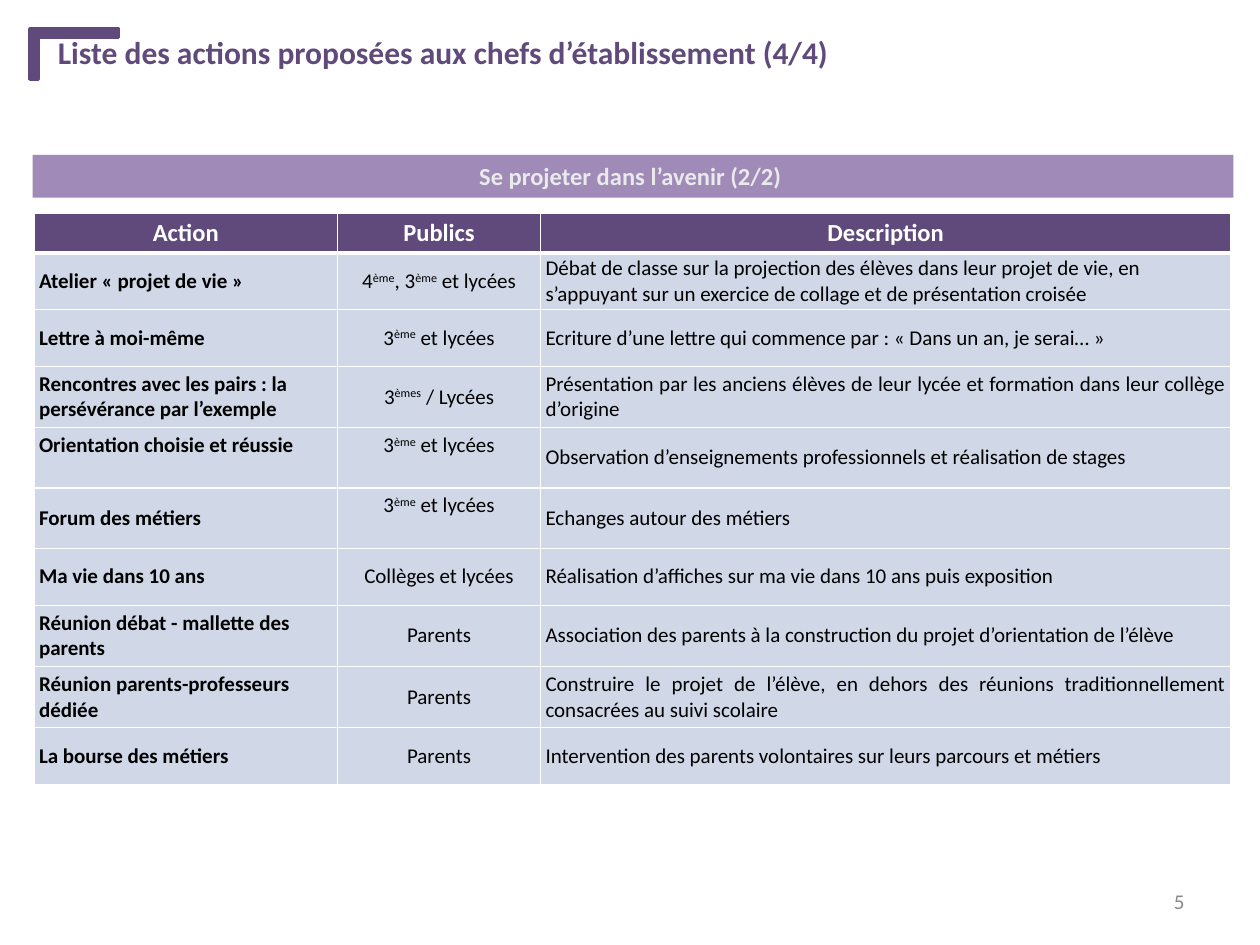
from lxml.etree import SubElement
from pptx import Presentation
from pptx.dml.color import RGBColor
from pptx.enum.shapes import MSO_SHAPE as Shape
from pptx.enum.text import MSO_ANCHOR as Anchor, PP_ALIGN as Align
from pptx.oxml.ns import qn
from pptx.util import Inches, Pt

COLORS = {"purple": "604A7B", "lilac": "9F8AB8", "pale": "EAEAEA", "row": "D0D8E8",
          "white": "FFFFFF", "black": "000000", "grey": "898989"}
UNIT = Inches(0.1)  # the slide is a grid of 100 columns by 75 rows


def write(frame, text, size, color, bold=False, align=Align.LEFT, anchor=Anchor.TOP):
    """Add text run by run; parts between ^ marks are superscript."""
    frame.word_wrap = True
    frame.vertical_anchor = anchor
    paragraph = frame.paragraphs[0]
    paragraph.alignment = align
    for index, part in enumerate(text.split("^")):
        run = paragraph.add_run()
        run.text = part
        run.font.name = "Calibri"
        run.font.size = Pt(size)
        run.font.bold = bold
        run.font.color.rgb = RGBColor.from_string(COLORS[color])
        if index % 2:
            run.font._element.set("baseline", "30000")


def grid(*lengths):
    return [round(length * UNIT) for length in lengths]


presentation = Presentation()
presentation.slide_width, presentation.slide_height = grid(100, 75)
slide = presentation.slides.add_slide(presentation.slide_layouts[5])
shapes = slide.shapes

# Title
title = shapes.title
title.left, title.top, title.width, title.height = grid(3.6, 2.1, 94.1, 4)
write(title.text_frame, "Liste des actions proposées aux chefs d’établissement (4/4)",
      18, "purple", bold=True)

# Table of actions: name, public, description
header = ("Action", "Publics", "Description")
actions = [
    ("Atelier «\u00a0projet de vie\u00a0»".replace("\u00a0", " "), "4^ème^, 3^ème^ et lycées",
     "Débat de classe sur la projection des élèves dans leur projet de vie, en "
     "s’appuyant sur un exercice de collage et de présentation croisée"),
    ("Lettre à moi-même", "3^ème^ et lycées",
     "Ecriture d’une lettre qui commence par : « Dans un an, je serai… »"),
    ("Rencontres avec les pairs : la persévérance par l’exemple", "3^èmes^ / Lycées",
     "Présentation par les anciens élèves de leur lycée et formation dans leur "
     "collège d’origine"),
    ("Orientation choisie et réussie", "3^ème^ et lycées",
     "Observation d’enseignements professionnels et réalisation de stages"),
    ("Forum des métiers", "3^ème^ et lycées", "Echanges autour des métiers"),
    ("Ma vie dans 10 ans", "Collèges et lycées",
     "Réalisation d’affiches sur ma vie dans 10 ans puis exposition"),
    ("Réunion débat - mallette des parents", "Parents",
     "Association des parents à la construction du projet d’orientation de l’élève"),
    ("Réunion parents-professeurs dédiée", "Parents",
     "Construire le projet de l’élève, en dehors des réunions traditionnellement "
     "consacrées au suivi scolaire"),
    ("La bourse des métiers", "Parents",
     "Intervention des parents volontaires sur leurs parcours et métiers"),
]
column_widths = grid(24.1, 16.1, 54.8)
row_heights = grid(3.1, 4.5, 4.5, 4.8, 4.8, 4.8, 4.5, 4.8, 4.8, 4.5)
left, top = grid(2.7, 16.9)
table = shapes.add_table(len(row_heights), len(column_widths), left, top,
                         sum(column_widths), sum(row_heights)).table
table.horz_banding = False
for column, width in zip(table.columns, column_widths):
    column.width = width
for row, height in zip(table.rows, row_heights):
    row.height = height

top_cells = {(4, 0), (4, 1), (5, 1)}  # cells whose text sits at the top
for row, texts in enumerate([header] + actions):
    for column, text in enumerate(texts):
        cell = table.cell(row, column)
        cell.margin_left = cell.margin_right = Inches(0.04)
        cell.margin_top = cell.margin_bottom = Inches(0 if row in (1, 2) else 0.04)

        # White borders, thick below the header
        properties = cell._tc.get_or_add_tcPr()
        for side in "LRTB":
            thick = (row, side) in ((0, "B"), (1, "T"))
            border = SubElement(properties, qn(f"a:ln{side}"), w=str(Pt(3 if thick else 0.75)))
            fill = SubElement(border, qn("a:solidFill"))
            SubElement(fill, qn("a:srgbClr"), val=COLORS["white"])
        cell.fill.solid()
        cell.fill.fore_color.rgb = RGBColor.from_string(COLORS["row" if row else "purple"])

        if row == 0:
            write(cell.text_frame, text, 14, "white", bold=True, align=Align.CENTER)
        else:
            last_align = Align.LEFT if row < 3 else Align.JUSTIFY
            write(cell.text_frame, text, 12, "black", bold=column == 0,
                  align=(Align.LEFT, Align.CENTER, last_align)[column])
        in_middle = row > 0 and (row, column) not in top_cells
        cell.vertical_anchor = Anchor.MIDDLE if in_middle else Anchor.TOP

# Slide number
number = shapes.add_textbox(*grid(71.7, 69.5, 23.3, 4))
write(number.text_frame, "5", 12, "grey", align=Align.RIGHT, anchor=Anchor.MIDDLE)

# Corner mark beside the title, and section banner
corner = shapes.add_shape(Shape.CORNER, *grid(3.9, 0.8, 4, 7))
corner.rotation = 90
corner.adjustments[0], corner.adjustments[1] = 0.16, 0.17
corner.line.color.rgb = RGBColor.from_string(COLORS["purple"])
corner.line.width = Pt(2)
banner = shapes.add_shape(Shape.RECTANGLE, *grid(2.6, 12.3, 95.3, 3.4))
banner.line.fill.background()
for shape, color in ((corner, "purple"), (banner, "lilac")):
    shape.shadow.inherit = False
    shape.fill.solid()
    shape.fill.fore_color.rgb = RGBColor.from_string(COLORS[color])
write(banner.text_frame, "Se projeter dans l’avenir (2/2) ", 14, "pale",
      bold=True, align=Align.CENTER)

presentation.save("out.pptx")
